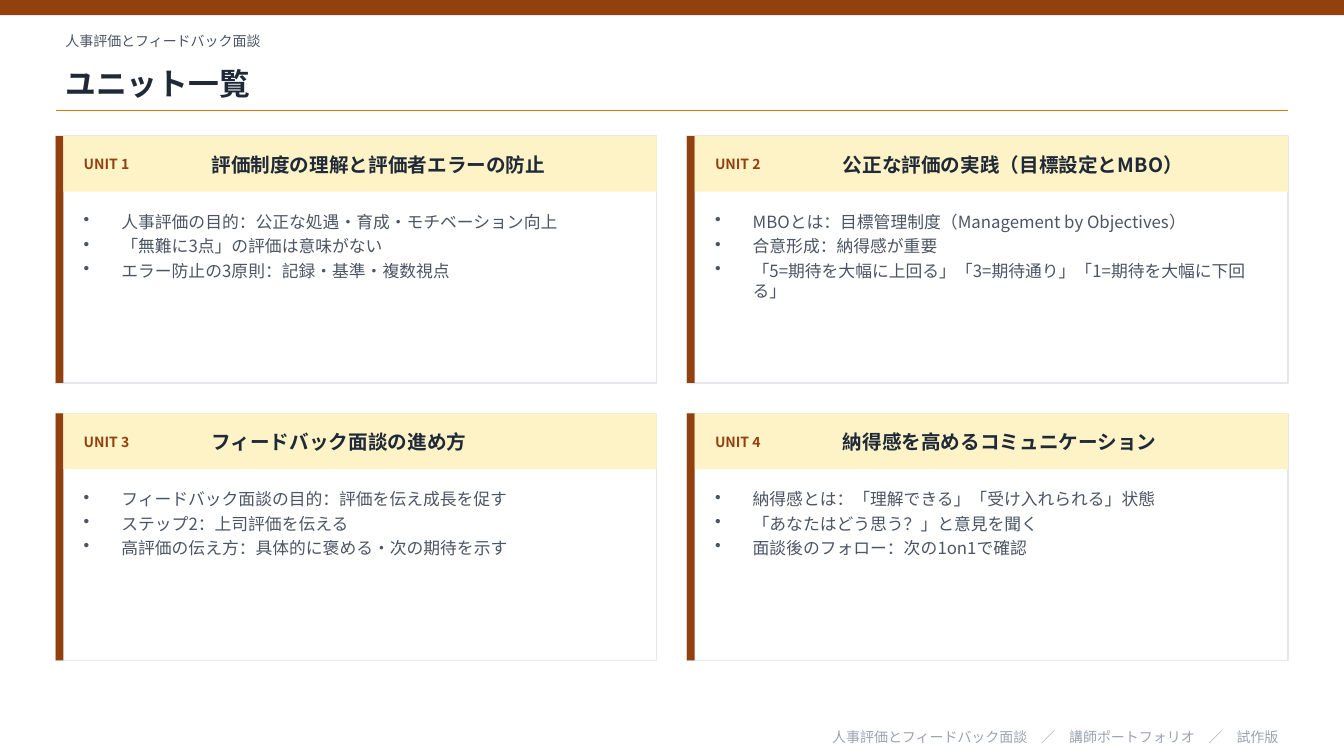
from lxml import etree
from pptx import Presentation
from pptx.dml.color import RGBColor
from pptx.enum import shapes, text
from pptx.oxml.ns import qn
from pptx.util import Cm, Pt

FONT = "Noto Sans CJK JP"
BROWN, AMBER, CREAM = "92400E", "D97706", "FEF3C7"
INK, GREY, PALE, BORDER = "1F2937", "4B5563", "9CA3AF", "E5E7EB"

deck = Presentation()
deck.slide_width, deck.slide_height = Cm(33.87), Cm(19.05)
page = deck.slides.add_slide(deck.slide_layouts[6])


def add_block(left, top, width, height, fill, line=None):
    block = page.shapes.add_shape(
        shapes.MSO_SHAPE.RECTANGLE, Cm(left), Cm(top), Cm(width), Cm(height))
    block.shadow.inherit = False
    block.fill.solid()
    block.fill.fore_color.rgb = RGBColor.from_string(fill)
    if line:
        block.line.color.rgb = RGBColor.from_string(line)
        block.line.width = Pt(1)
    else:
        block.line.fill.background()


def add_text(lines, left, top, width, height, size, color, bold=False,
             align=None, anchor=text.MSO_ANCHOR.MIDDLE, bullets=False):
    """Add a text box with one paragraph for each of the lines."""
    box = page.shapes.add_textbox(Cm(left), Cm(top), Cm(width), Cm(height))
    frame = box.text_frame
    frame.word_wrap = True
    frame.vertical_anchor = anchor
    for number, line in enumerate(lines):
        para = frame.add_paragraph() if number else frame.paragraphs[0]
        if bullets:
            props = para._p.get_or_add_pPr()
            props.set("marL", str(Cm(0.95)))
            props.set("indent", str(-Cm(0.95)))
            etree.SubElement(props, qn("a:buChar"), char="•")
            para.space_after = Pt(3)
        if align is not None:
            para.alignment = align
        span = para.add_run()
        span.text = line
        span.font.size = Pt(size)
        span.font.bold = bold
        span.font.color.rgb = RGBColor.from_string(color)
        span.font.name = FONT
        etree.SubElement(span._r.get_or_add_rPr(), qn("a:ea"), typeface=FONT)


# Page heading
MARGIN, CONTENT_WIDTH = 1.4, 31.06
add_block(0, 0, 33.87, 0.38, BROWN)
add_text(["人事評価とフィードバック面談"], MARGIN, 0.64, CONTENT_WIDTH, 0.76, 10, GREY)
add_text(["ユニット一覧"], MARGIN, 1.4, CONTENT_WIDTH, 1.4, 22, INK, bold=True)
rule = page.shapes.add_connector(
    shapes.MSO_CONNECTOR.STRAIGHT,
    Cm(MARGIN), Cm(2.79), Cm(MARGIN + CONTENT_WIDTH), Cm(2.79))
rule.line.color.rgb = RGBColor.from_string(AMBER)
rule.line.width = Pt(1)
etree.SubElement(rule._element.spPr, qn("a:effectLst"))

# Unit cards, two by two
units = [
    ("評価制度の理解と評価者エラーの防止", [
        "人事評価の目的：公正な処遇・育成・モチベーション向上",
        "「無難に3点」の評価は意味がない",
        "エラー防止の3原則：記録・基準・複数視点"]),
    ("公正な評価の実践（目標設定とMBO）", [
        "MBOとは：目標管理制度（Management by Objectives）",
        "合意形成：納得感が重要",
        "「5=期待を大幅に上回る」「3=期待通り」「1=期待を大幅に下回る」"]),
    ("フィードバック面談の進め方", [
        "フィードバック面談の目的：評価を伝え成長を促す",
        "ステップ2：上司評価を伝える",
        "高評価の伝え方：具体的に褒める・次の期待を示す"]),
    ("納得感を高めるコミュニケーション", [
        "納得感とは：「理解できる」「受け入れられる」状態",
        "「あなたはどう思う？」と意見を聞く",
        "面談後のフォロー：次の1on1で確認"]),
]
CARD_WIDTH, CARD_HEIGHT, STRIPE = 15.15, 6.22, 0.2
COLUMN_STEP, ROW_STEP = 15.91, 6.99
for index, (title, points) in enumerate(units):
    row, column = divmod(index, 2)
    left = MARGIN + column * COLUMN_STEP
    top = 3.43 + row * ROW_STEP
    add_block(left, top, CARD_WIDTH, CARD_HEIGHT, "FFFFFF", line=BORDER)
    add_block(left, top, STRIPE, CARD_HEIGHT, BROWN)
    add_block(left + STRIPE, top, CARD_WIDTH - STRIPE, 1.4, CREAM)
    add_text([f"UNIT {index + 1}"], left + 0.46, top + 0.2, 3.05, 1.02, 10, BROWN, bold=True)
    add_text([title], left + 3.68, top + 0.2, 11.1, 1.02, 14, INK, bold=True)
    add_text(points, left + 0.46, top + 1.78, 14.25, 4.06, 12, GREY,
             anchor=text.MSO_ANCHOR.TOP, bullets=True)

# Footer
add_text(["人事評価とフィードバック面談　／　講師ポートフォリオ　／　試作版"],
         MARGIN, 18.29, CONTENT_WIDTH, 0.56, 10, PALE, align=text.PP_ALIGN.RIGHT)

deck.save("out.pptx")
